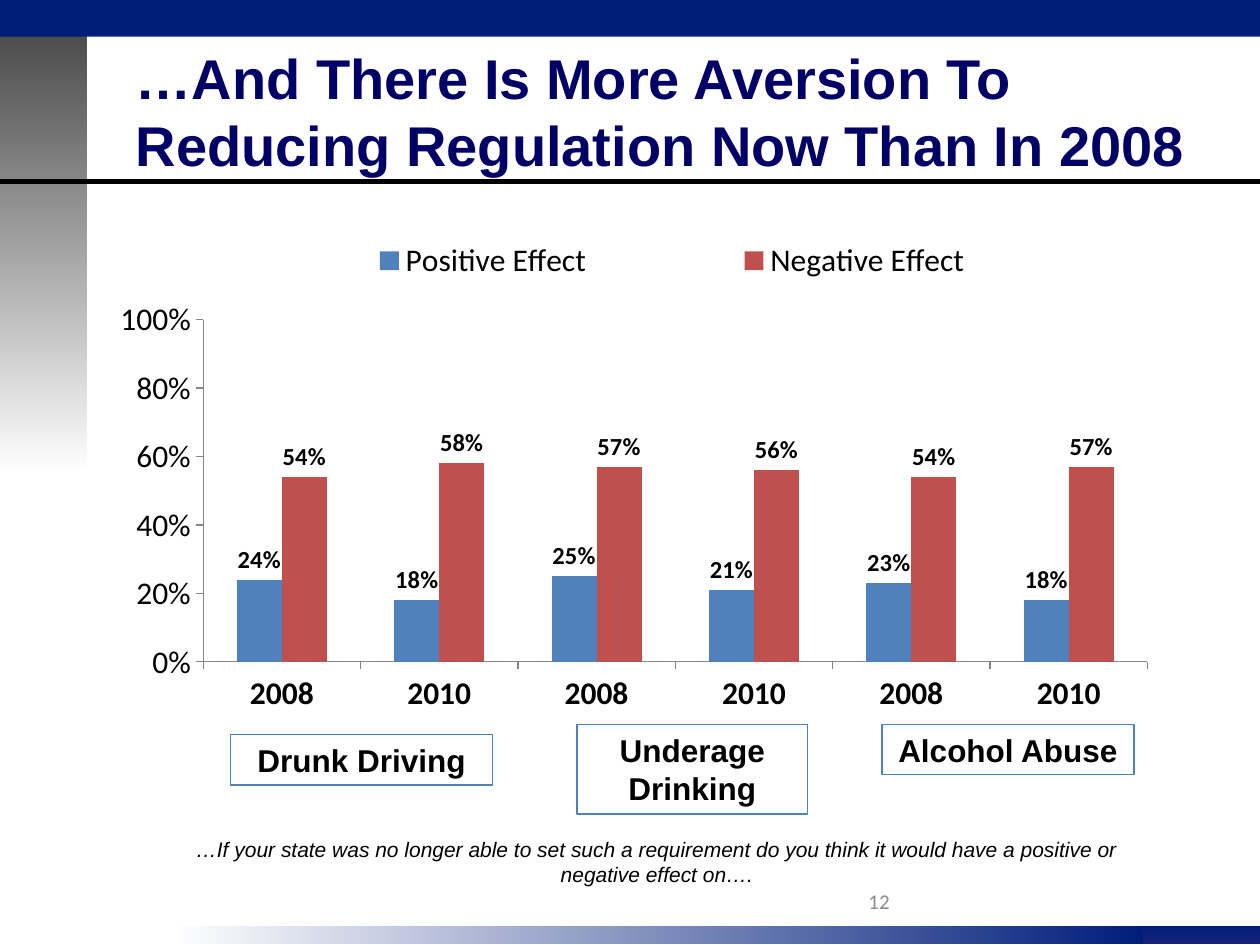
import pptx
import pptx.chart.data
import pptx.dml.color
import pptx.enum.chart
import pptx.enum.shapes
import pptx.enum.text
import pptx.oxml
import pptx.oxml.ns
import pptx.util
from pptx.util import Inches

RGBColor = pptx.dml.color.RGBColor
ALIGN = pptx.enum.text.PP_ALIGN
ANCHOR = pptx.enum.text.MSO_ANCHOR
CHART = pptx.enum.chart

BLACK = RGBColor(0x00, 0x00, 0x00)
WHITE = RGBColor(0xFF, 0xFF, 0xFF)
NAVY = RGBColor(0x00, 0x1D, 0x7A)
DARK_NAVY = RGBColor(0x17, 0x23, 0x7B)
TITLE_BLUE = RGBColor(0x00, 0x00, 0x66)
DARK_GRAY = RGBColor(0x4D, 0x4D, 0x4D)
NUMBER_GRAY = RGBColor(0x8C, 0x8C, 0x8C)
AXIS_GRAY = RGBColor(0x86, 0x86, 0x86)
BLUE = RGBColor(0x4F, 0x81, 0xBD)
RED = RGBColor(0xC0, 0x50, 0x4D)

YEARS = ["2008", "2010"] * 3
SERIES = [
    ("Positive Effect", (0.24, 0.18, 0.25, 0.21, 0.23, 0.18), BLUE),
    ("Negative Effect", (0.54, 0.58, 0.57, 0.56, 0.54, 0.57), RED),
]
TOPICS = [
    ("Drunk Driving", (1.83, 5.83, 2.08, 0.4)),
    ("Underage Drinking", (4.58, 5.75, 1.83, 0.71)),
    ("Alcohol Abuse", (7, 5.75, 2, 0.4)),
]
QUESTION = (
    "…If your state was no longer able to set such a requirement do you think "
    "it would have a positive or negative effect on…."
)


def set_font(font, color=BLACK, **values):
    """Set font attributes and colour."""
    for name, value in values.items():
        setattr(font, name, pptx.util.Pt(value) if name == "size" else value)
    font.color.rgb = color


def write_text(shape, text, align, anchor, **font_values):
    """Write one formatted paragraph into a shape."""
    frame = shape.text_frame
    for name, value in {"word_wrap": True, "vertical_anchor": anchor}.items():
        setattr(frame, name, value)
    paragraph = frame.paragraphs[0]
    paragraph.text = text
    paragraph.alignment = align
    set_font(paragraph.runs[0].font, **font_values)


def add_text(slide, box, text, align, anchor, **font_values):
    """Add a text box."""
    shape = slide.shapes.add_textbox(*map(Inches, box))
    write_text(shape, text, align, anchor, **font_values)


def add_rectangle(slide, box):
    """Add a rectangle without shadow."""
    kind = pptx.enum.shapes.MSO_SHAPE.RECTANGLE
    shape = slide.shapes.add_shape(kind, *map(Inches, box))
    shape.shadow.inherit = False
    return shape


def add_band(slide, box, colors, angle=0):
    """Add a borderless band with a solid or two-colour gradient fill."""
    shape = add_rectangle(slide, box)
    shape.line.fill.background()
    if len(colors) == 1:
        shape.fill.solid()
        shape.fill.fore_color.rgb = colors[0]
        return
    shape.fill.gradient()
    shape.fill.gradient_angle = angle
    for stop, color in zip(shape.fill.gradient_stops, colors):
        stop.color.rgb = color


def add_topic(slide, text, box):
    """Add an outlined topic label."""
    shape = add_rectangle(slide, box)
    shape.fill.background()
    shape.line.color.rgb = BLUE
    shape.line.width = pptx.util.Pt(0.75)
    write_text(shape, text, ALIGN.CENTER, ANCHOR.TOP, size=18, name="Arial", bold=True)


def add_rule(slide, y):
    """Add a black rule across the slide."""
    kind = pptx.enum.shapes.MSO_CONNECTOR.STRAIGHT
    line = slide.shapes.add_connector(kind, Inches(0), Inches(y), Inches(10), Inches(y))
    line.line.color.rgb = BLACK
    line.line.width = pptx.util.Pt(3)
    properties = line._element.spPr
    properties.append(properties.makeelement(pptx.oxml.ns.qn("a:effectLst"), {}))


def make_layout(x, y, w, h, inner=False):
    """Make a manual chart layout element."""
    target = '<c:layoutTarget val="inner"/>' if inner else ""
    sizes = "".join(
        f'<c:{name} val="{value}"/>' for name, value in zip("xywh", (x, y, w, h))
    )
    return pptx.oxml.parse_xml(
        f'<c:layout {pptx.oxml.ns.nsdecls("c")}><c:manualLayout>{target}'
        f'<c:xMode val="edge"/><c:yMode val="edge"/>{sizes}'
        "</c:manualLayout></c:layout>"
    )


def format_axis(axis, bold):
    """Format an axis, its ticks and its labels."""
    values = {
        "has_major_gridlines": False,
        "major_tick_mark": CHART.XL_TICK_MARK.OUTSIDE,
        "minor_tick_mark": CHART.XL_TICK_MARK.NONE,
    }
    for name, value in values.items():
        setattr(axis, name, value)
    axis.format.line.color.rgb = AXIS_GRAY
    set_font(axis.tick_labels.font, size=18, name="Calibri", bold=bold)


def format_series(series, color):
    """Colour a series and label its columns."""
    series.format.fill.solid()
    series.format.fill.fore_color.rgb = color
    labels = series.data_labels
    values = {
        "show_value": True,
        "number_format": "0%",
        "number_format_is_linked": False,
        "position": CHART.XL_LABEL_POSITION.OUTSIDE_END,
    }
    for name, value in values.items():
        setattr(labels, name, value)
    set_font(labels.font, size=14, name="Calibri", bold=True)


def add_effect_chart(slide, box):
    """Add the clustered column chart of positive and negative effects."""
    data = pptx.chart.data.CategoryChartData(number_format="0%")
    data.categories = YEARS
    for name, values, _ in SERIES:
        data.add_series(name, values)
    kind = CHART.XL_CHART_TYPE.COLUMN_CLUSTERED
    chart = slide.shapes.add_chart(kind, *map(Inches, box), data).chart
    chart.has_title = False
    set_font(chart.font, size=18, name="Calibri", bold=True)

    plot = chart.plots[0]
    for name, value in {"gap_width": 150, "overlap": 0, "vary_by_categories": False}.items():
        setattr(plot, name, value)
    for series, (_, _, color) in zip(plot.series, SERIES):
        format_series(series, color)

    format_axis(chart.category_axis, True)
    axis = chart.value_axis
    format_axis(axis, False)
    for name, value in {"minimum_scale": 0, "maximum_scale": 1, "major_unit": 0.2}.items():
        setattr(axis, name, value)
    axis.tick_labels.number_format = "0%"
    axis.tick_labels.number_format_is_linked = False

    chart.has_legend = True
    legend = chart.legend
    legend.position = CHART.XL_LEGEND_POSITION.TOP
    legend.include_in_layout = False
    set_font(legend.font, size=18, name="Calibri", bold=False)
    qn = pptx.oxml.ns.qn
    legend_position = legend._element.find(qn("c:legendPos"))
    for old in legend._element.findall(qn("c:layout")):
        legend._element.remove(old)
    legend_position.addnext(make_layout(0.12, 0.03, 0.83, 0.1))
    area = chart._chartSpace.chart.plotArea
    for old in area.findall(qn("c:layout")):
        area.remove(old)
    area.insert(0, make_layout(0.093, 0.197, 0.89, 0.679, inner=True))


def main():
    """Build and save the slide."""
    presentation = pptx.Presentation()
    presentation.slide_width = Inches(10)
    presentation.slide_height = Inches(7.5)
    slide = presentation.slides.add_slide(presentation.slide_layouts[6])
    add_band(slide, (2.29, 7.35, 7.72, 0.14), (NAVY, DARK_NAVY), 270)
    add_band(slide, (0, 0.28, 0.69, 3.49), (DARK_GRAY, WHITE), 270)
    add_band(slide, (1.35, 7.35, 7.72, 0.14), (WHITE, NAVY))
    add_band(slide, (0, 0, 10, 0.29), (NAVY,))
    add_rule(slide, 1.44)
    add_text(slide, (0.98, 0.59, 9.02, 0.58),
             "…And There Is More Aversion To Reducing Regulation Now Than In 2008",
             ALIGN.LEFT, ANCHOR.MIDDLE, size=32, name="Arial", bold=True, color=TITLE_BLUE)
    add_text(slide, (4.83, 6.95, 2.33, 0.4), "12", ALIGN.RIGHT, ANCHOR.MIDDLE,
             size=12, name="Calibri", color=NUMBER_GRAY)
    add_effect_chart(slide, (0.83, 1.75, 8.42, 4))
    for text, box in TOPICS:
        add_topic(slide, text, box)
    add_text(slide, (1.25, 6.17, 7.93, 0.92), QUESTION, ALIGN.CENTER, ANCHOR.BOTTOM,
             size=12, name="Arial", italic=True)
    presentation.save("out.pptx")


if __name__ == "__main__":
    main()
